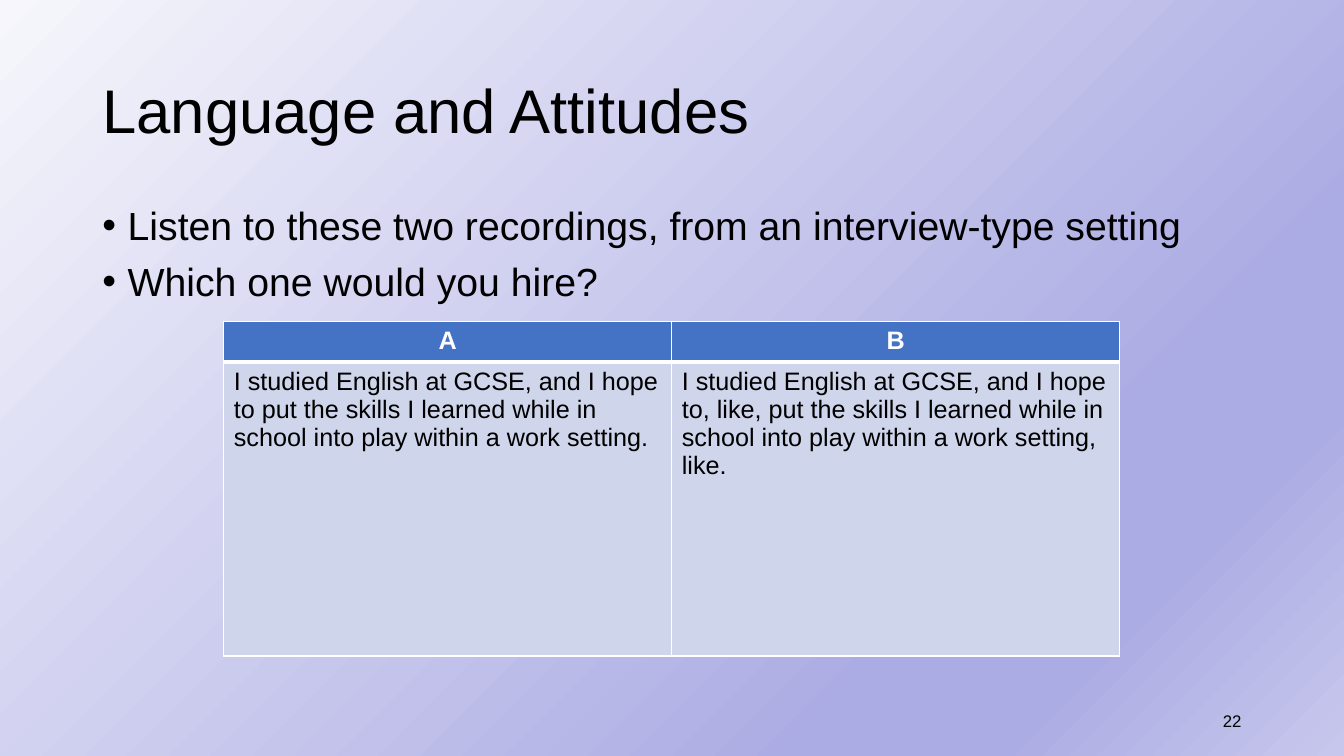
from lxml.etree import SubElement
from pptx import Presentation
from pptx.dml.color import RGBColor
from pptx.enum.text import MSO_ANCHOR, PP_ALIGN
from pptx.oxml.ns import qn
from pptx.util import Cm, Pt

BLACK, WHITE = "000000", "FFFFFF"
HEADER_FILL, BODY_FILL = "4472C4", "CFD5EA"
BACKGROUND_STOPS = [(0, "F6F6FC"), (74, "ACACE4"), (83, "ACACE4"), (100, "C7C7ED")]
ANSWERS = [
    ("A", "B"),
    ("I studied English at GCSE, and I hope to put the skills I learned while in "
     "school into play within a work setting.",
     "I studied English at GCSE, and I hope to, like, put the skills I learned while in "
     "school into play within a work setting, like."),
]


def rgb(color):
    return RGBColor.from_string(color)


def format_paragraph(p, size, color=BLACK, bold=False, align=PP_ALIGN.LEFT):
    p.alignment = align
    for r in p.runs:
        r.font.name = "Arial"
        r.font.size = Pt(size)
        r.font.bold = bold
        r.font.color.rgb = rgb(color)


def set_background(s):
    fill = s.background.fill
    fill.gradient()
    fill.gradient_angle = 315
    stops = s.element.find(".//" + qn("a:gsLst"))
    stops.clear()
    for position, color in BACKGROUND_STOPS:
        gs = SubElement(stops, qn("a:gs"), pos=str(position * 1000))
        SubElement(gs, qn("a:srgbClr"), val=color)


def add_text(s, box, text, size, anchor=MSO_ANCHOR.MIDDLE, align=PP_ALIGN.LEFT):
    tf = s.shapes.add_textbox(*map(Cm, box)).text_frame
    tf.word_wrap = True
    tf.vertical_anchor = anchor
    tf.text = text
    for p in tf.paragraphs:
        format_paragraph(p, size, align=align)
    return tf


def add_bullets(tf):
    for p in tf.paragraphs:
        p.line_spacing = 0.9
        p.space_before = Pt(10)
        pPr = p._p.get_or_add_pPr()
        pPr.set("marL", str(Cm(0.64)))
        pPr.set("indent", str(-Cm(0.64)))
        SubElement(pPr, qn("a:buFont"), typeface="Arial")
        SubElement(pPr, qn("a:buChar"), char="•")


def set_borders(cell, widths):
    """Draw white borders; widths are points for left, right, top and bottom."""
    tcPr = cell._tc.get_or_add_tcPr()
    for side, width in zip("LRTB", widths):
        ln = SubElement(tcPr, qn(f"a:ln{side}"), w=str(Pt(width)))
        fill = SubElement(ln, qn("a:solidFill"))
        SubElement(fill, qn("a:srgbClr"), val=WHITE)


def add_answer_table(s):
    table = s.shapes.add_table(2, 2, Cm(5.64), Cm(8.1), Cm(22.58), Cm(8.43)).table
    for row, height in zip(table.rows, (1.03, 7.4)):
        row.height = Cm(height)
    for i, texts in enumerate(ANSWERS):
        header = i == 0
        for j, text in enumerate(texts):
            cell = table.cell(i, j)
            cell.text = text
            set_borders(cell, (1, 1, 1, 3) if header else (1, 1, 3, 1))
            cell.fill.solid()
            cell.fill.fore_color.rgb = rgb(HEADER_FILL if header else BODY_FILL)
            format_paragraph(cell.text_frame.paragraphs[0], 18,
                             WHITE if header else BLACK, header,
                             PP_ALIGN.CENTER if header else PP_ALIGN.LEFT)


def main():
    prs = Presentation()
    prs.slide_width, prs.slide_height = Cm(33.87), Cm(19.05)
    s = prs.slides.add_slide(prs.slide_layouts[6])
    set_background(s)
    title = add_text(s, (2.33, 1.01, 29.21, 3.68), "Language and Attitudes", 44)
    title.paragraphs[0].line_spacing = 0.9
    add_bullets(add_text(
        s, (2.33, 5.07, 29.21, 3.02),
        "Listen to these two recordings, from an interview-type setting\n"
        "Which one would you hire?", 28, MSO_ANCHOR.TOP))
    add_answer_table(s)
    add_text(s, (23.92, 17.66, 7.62, 1.01), "22", 12, align=PP_ALIGN.RIGHT)
    prs.save("out.pptx")


if __name__ == "__main__":
    main()
